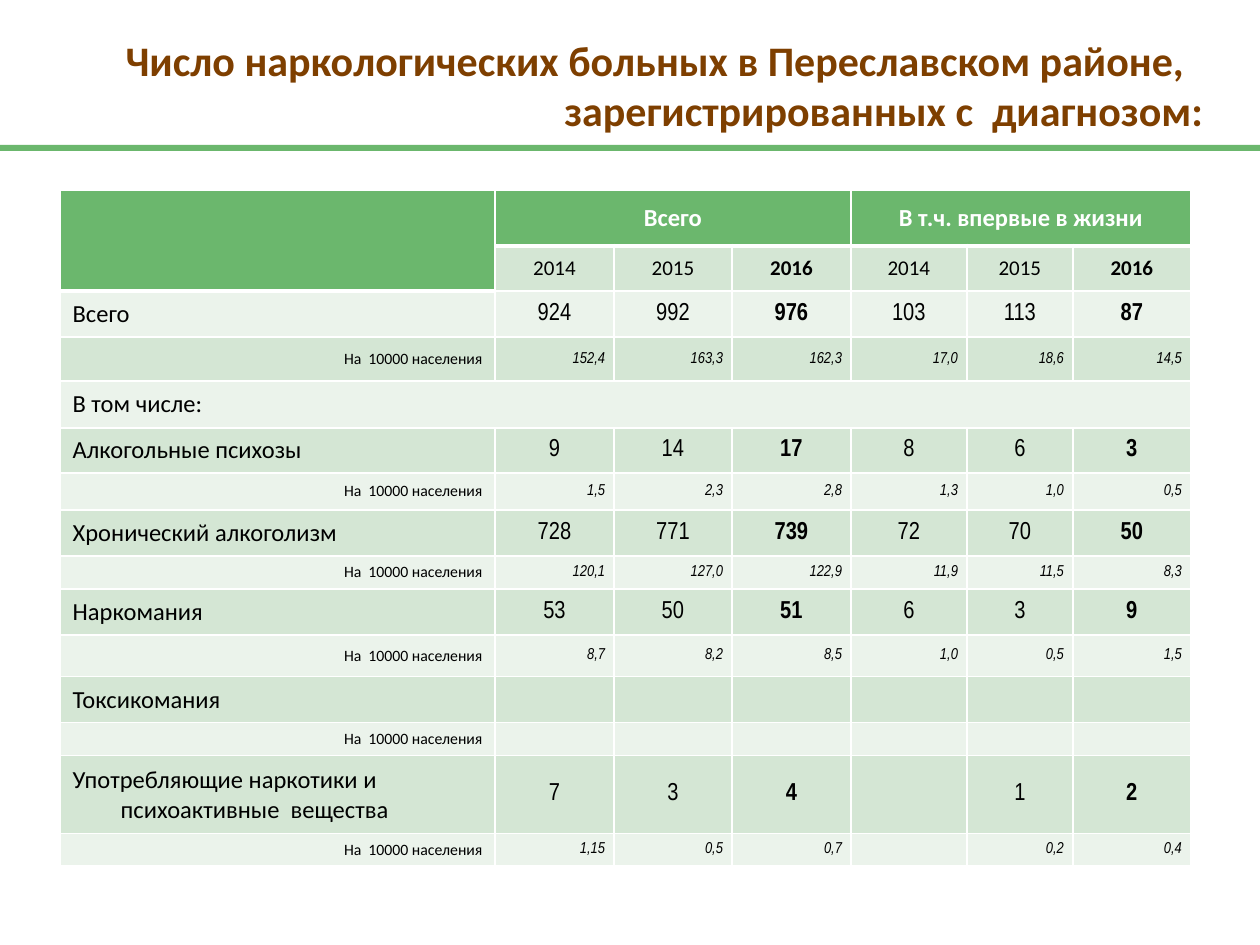
from lxml.etree import SubElement
from pptx import Presentation
from pptx.dml.color import RGBColor
from pptx.enum.shapes import MSO_SHAPE
from pptx.enum.text import MSO_ANCHOR, PP_ALIGN
from pptx.oxml.ns import qn
from pptx.util import Emu, Pt


def px(length):
    return Emu(round(length * 914400 / 126))


def color(value):
    return RGBColor.from_string(value)


GREEN = "6BB76D"
WHITE = "FFFFFF"
BLACK = "000000"
BANDS = ["EBF3EB", "D4E6D4"]
RATE = "На  10000 населения"
YEARS = ["2014", "2015", "2016"]
COLUMN_WIDTHS = [435, 119, 118, 119, 116, 106, 118]
ROW_HEIGHTS = [56, 45, 46, 44, 47, 45, 37, 46, 33, 46, 42, 46, 33, 78, 32]
ROWS = [
    ["", "Всего", "", "", "В т.ч. впервые в жизни", "", ""],
    [""] + YEARS * 2,
    ["Всего", "924", "992", "976", "103", "113", "87"],
    [RATE, "152,4", "163,3", "162,3", "17,0", "18,6", "14,5"],
    ["В том числе:"] + [""] * 6,
    ["Алкогольные психозы", "9", "14", "17", "8", "6", "3"],
    [RATE, "1,5", "2,3", "2,8", "1,3", "1,0", "0,5"],
    ["Хронический алкоголизм", "728", "771", "739", "72", "70", "50"],
    [RATE, "120,1", "127,0", "122,9", "11,9", "11,5", "8,3"],
    ["Наркомания", "53", "50", "51", "6", "3", "9"],
    [RATE, "8,7", "8,2", "8,5", "1,0", "0,5", "1,5"],
    ["Токсикомания"] + [""] * 6,
    [RATE] + [""] * 6,
    ["Употребляющие наркотики и психоактивные  вещества", "7", "3", "4", "", "1", "2"],
    [RATE, "1,15", "0,5", "0,7", "", "0,2", "0,4"],
]

presentation = Presentation()
presentation.slide_width = px(1260)
presentation.slide_height = px(945)
slide = presentation.slides.add_slide(presentation.slide_layouts[5])

title = slide.shapes.title
title_box = {"left": 35, "top": 26, "width": 1181, "height": 118}
for name, value in title_box.items():
    setattr(title, name, px(value))
title.text_frame.text = "Число наркологических больных в Переславском районе,  \vзарегистрированных с  диагнозом:"
title.text_frame.vertical_anchor = MSO_ANCHOR.MIDDLE
title_paragraph = title.text_frame.paragraphs[0]
title_paragraph.alignment = PP_ALIGN.RIGHT
for run in title_paragraph.runs:
    for name, value in {"name": "Calibri", "size": Pt(24), "bold": True}.items():
        setattr(run.font, name, value)
    run.font.color.rgb = color("7E3F00")

table = slide.shapes.add_table(
    len(ROWS), len(COLUMN_WIDTHS), px(60), px(190), px(sum(COLUMN_WIDTHS)), px(sum(ROW_HEIGHTS))
).table
table.first_row = True
table.horz_banding = True
for column, width in zip(table.columns, COLUMN_WIDTHS):
    column.width = px(width)
for row, height in zip(table.rows, ROW_HEIGHTS):
    row.height = px(height)

for row_index, texts in enumerate(ROWS):
    is_rate = texts[0] == RATE
    for column_index, text in enumerate(texts):
        cell = table.cell(row_index, column_index)
        is_label = column_index == 0
        is_header = row_index == 0 or (row_index == 1 and is_label)
        is_year = row_index == 1
        is_number = row_index > 1 and not is_label

        properties = cell._tc.get_or_add_tcPr()
        for side in ["lnL", "lnR", "lnT", "lnB"]:
            line_width = Pt(3) if is_header and side == "lnB" else Pt(1)
            line = SubElement(properties, qn(f"a:{side}"), w=str(line_width))
            line_fill = SubElement(line, qn("a:solidFill"))
            SubElement(line_fill, qn("a:srgbClr"), val=WHITE)
        cell.fill.solid()
        cell.fill.fore_color.rgb = color(GREEN if is_header else BANDS[row_index % 2])
        cell.vertical_anchor = MSO_ANCHOR.MIDDLE

        paragraph = cell.text_frame.paragraphs[0]
        if is_number or (is_year and 1 <= column_index <= 3):
            margins = {"margin_left": 9, "margin_right": 9, "margin_top": 0, "margin_bottom": 0}
            for name, value in margins.items():
                setattr(cell, name, px(value))
        elif text:
            paragraph_properties = paragraph._p.get_or_add_pPr()
            paragraph_properties.set("marL", str(px(48)))
            paragraph_properties.set("indent", str(-px(48)))
        if not text:
            SubElement(paragraph._p, qn("a:endParaRPr"), sz="900")
            continue

        if is_rate:
            paragraph.alignment = PP_ALIGN.RIGHT
        elif is_label:
            paragraph.alignment = PP_ALIGN.LEFT
        else:
            paragraph.alignment = PP_ALIGN.CENTER
        run = paragraph.add_run()
        run.text = text
        font_format = {
            "name": "Arial Narrow" if is_number else "Calibri",
            "size": Pt(9 if is_rate else 12 if is_year else 14),
            "bold": is_header or (column_index in (3, 6) and not is_rate),
            "italic": is_number and is_rate,
        }
        for name, value in font_format.items():
            setattr(run.font, name, value)
        run.font.color.rgb = color(WHITE if is_header else BLACK)

for first, last in [((0, 0), (1, 0)), ((0, 1), (0, 3)), ((0, 4), (0, 6)), ((4, 0), (4, 6))]:
    table.cell(*first).merge(table.cell(*last))

divider = slide.shapes.add_shape(MSO_SHAPE.RECTANGLE, px(0), px(145), px(1260), px(6))
divider.shadow.inherit = False
divider.fill.solid()
divider.fill.fore_color.rgb = color(GREEN)
divider.line.fill.background()

presentation.save("out.pptx")
